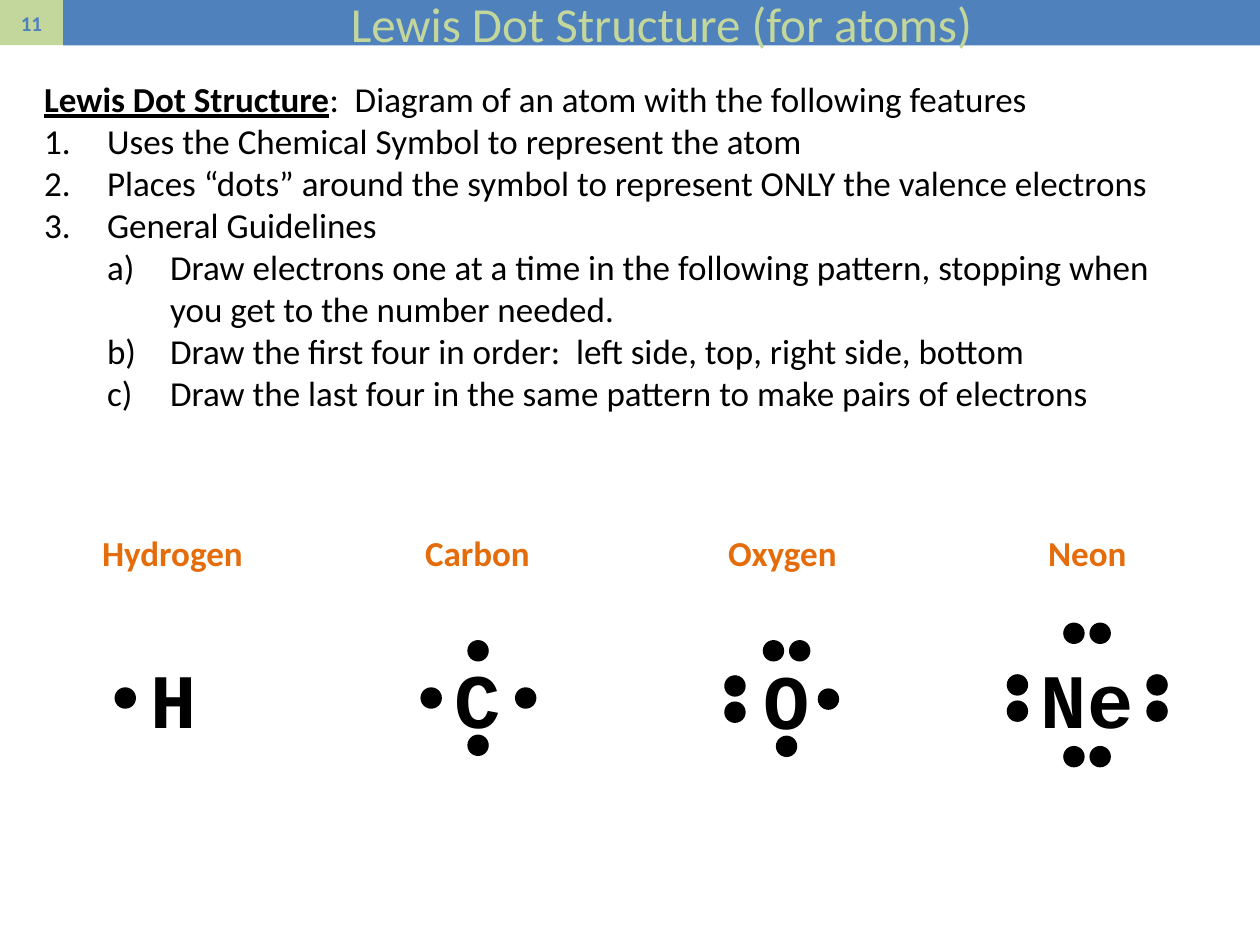
from lxml.etree import SubElement
from pptx import Presentation
from pptx.dml.color import RGBColor
from pptx.enum.shapes import MSO_SHAPE as SHAPE
from pptx.enum.text import MSO_ANCHOR as ANCHOR, MSO_AUTO_SIZE as AUTO, PP_ALIGN as ALIGN
from pptx.oxml.ns import qn
from pptx.util import Pt

BLUE, GREEN, ORANGE, BLACK = "4F81BD", "C3D69B", "E46C0A", "000000"


def fill(s, color):
    s.fill.solid()
    s.fill.fore_color.rgb = RGBColor.from_string(color)


def add_text(p, text, size=20, color=BLACK, font="Calibri", bold=False,
             underline=False, align=None):
    """Add one formatted run to a paragraph."""
    r = p.add_run()
    r.text = text
    r.font.size, r.font.name = Pt(size), font
    r.font.bold, r.font.underline = bold, underline
    fill(r.font, color)
    if align is not None:
        p.alignment = align


prs = Presentation()
prs.slide_width, prs.slide_height = Pt(720), Pt(540)
slide = prs.slides.add_slide(prs.slide_layouts[1])
shapes = slide.shapes

# Header: page number and title bar
number = shapes.add_shape(SHAPE.RECTANGLE, 0, 0, Pt(36), Pt(25.92))
number.shadow.inherit = False
number.line.fill.background()
fill(number, GREEN)
number.text_frame.vertical_anchor = ANCHOR.MIDDLE
add_text(number.text_frame.paragraphs[0], "11", size=12, color=BLUE, bold=True,
         align=ALIGN.CENTER)

title = shapes.title
title.left, title.top, title.width, title.height = Pt(36), Pt(0), Pt(684), Pt(25.92)
fill(title, BLUE)
title.text_frame.auto_size = AUTO.NONE
title.text_frame.vertical_anchor = ANCHOR.MIDDLE
add_text(title.text_frame.paragraphs[0], "Lewis Dot Structure (for atoms)", size=28,
         color=GREEN, align=ALIGN.CENTER)

# Definition and guidelines
body = slide.placeholders[1]
body.left, body.top, body.width, body.height = Pt(18), Pt(40.7), Pt(666.7), Pt(200.9)
tf = body.text_frame
tf.auto_size = AUTO.NONE
intro = tf.paragraphs[0]
add_text(intro, "Lewis Dot Structure", bold=True, underline=True)
add_text(intro, ":  Diagram of an atom with the following features")
intro.space_before = Pt(0)
pPr = intro._p.get_or_add_pPr()
pPr.set("marL", "0")
pPr.set("indent", "0")
SubElement(pPr, qn("a:buNone"))

guidelines = [
    (0, "Uses the Chemical Symbol to represent the atom"),
    (0, "Places “dots” around the symbol to represent ONLY the valence electrons"),
    (0, "General Guidelines"),
    (1, "Draw electrons one at a time in the following pattern, stopping when "
        "you get to the number needed."),
    (1, "Draw the first four in order:  left side, top, right side, bottom"),
    (1, "Draw the last four in the same pattern to make pairs of electrons"),
]
for level, text in guidelines:
    p = tf.add_paragraph()
    p.level = level
    p.space_before = Pt(0)
    add_text(p, text)
    pPr = p._p.get_or_add_pPr()
    pPr.set("marL", str(Pt(36 * (level + 1))))
    pPr.set("indent", str(-Pt(36)))
    SubElement(pPr, qn("a:buFont"), typeface="+mj-lt")
    SubElement(pPr, qn("a:buAutoNum"), type=("arabicPeriod", "alphaLcParenR")[level])

# Atoms: name, symbol, symbol centre, and per side (distance, number of dots)
DOT, PAIR = 12.24, 7.5
DIRECTIONS = {"left": (-1, 0), "top": (0, -1), "right": (1, 0), "bottom": (0, 1)}
atoms = [
    ("Hydrogen", "H", 99, 398.9, {"left": (27.4, 1)}),
    ("Carbon", "C", 273.2, 398.9,
     {"left": (26.8, 1), "top": (27, 1), "right": (27.2, 1), "bottom": (27, 1)}),
    ("Oxygen", "O", 449.5, 399.5,
     {"left": (29.5, 2), "top": (27.6, 2), "right": (23.9, 1), "bottom": (27, 1)}),
    ("Neon", "Ne", 621.2, 398.9,
     {"left": (39.8, 2), "top": (37, 2), "right": (40, 2), "bottom": (33.5, 2)}),
]
for i, (name, symbol, cx, cy, sides) in enumerate(atoms):
    label = shapes.add_textbox(Pt(23 + 174.24 * i), Pt(300.2), Pt(151.2), Pt(31.5))
    label.text_frame.word_wrap = True
    add_text(label.text_frame.paragraphs[0], name, color=ORANGE, bold=True,
             align=ALIGN.CENTER)

    w, h = 41 if len(symbol) == 1 else 57, 43.2
    box = shapes.add_textbox(Pt(cx - w / 2), Pt(cy - h / 2), Pt(w), Pt(h))
    tf = box.text_frame
    tf.word_wrap = False
    tf.margin_left = tf.margin_right = 0
    tf.vertical_anchor = ANCHOR.MIDDLE
    add_text(tf.paragraphs[0], symbol, size=44, font="Courier New", bold=True,
             align=ALIGN.CENTER)

    for side, (distance, count) in sides.items():
        dx, dy = DIRECTIONS[side]
        for shift in ((0,) if count == 1 else (-PAIR, PAIR)):
            x = cx + dx * distance + abs(dy) * shift
            y = cy + dy * distance + abs(dx) * shift
            dot = shapes.add_shape(SHAPE.OVAL, Pt(x - DOT / 2), Pt(y - DOT / 2),
                                   Pt(DOT), Pt(DOT))
            dot.shadow.inherit = False
            fill(dot, BLACK)
            dot.line.fill.background()

prs.save("out.pptx")
